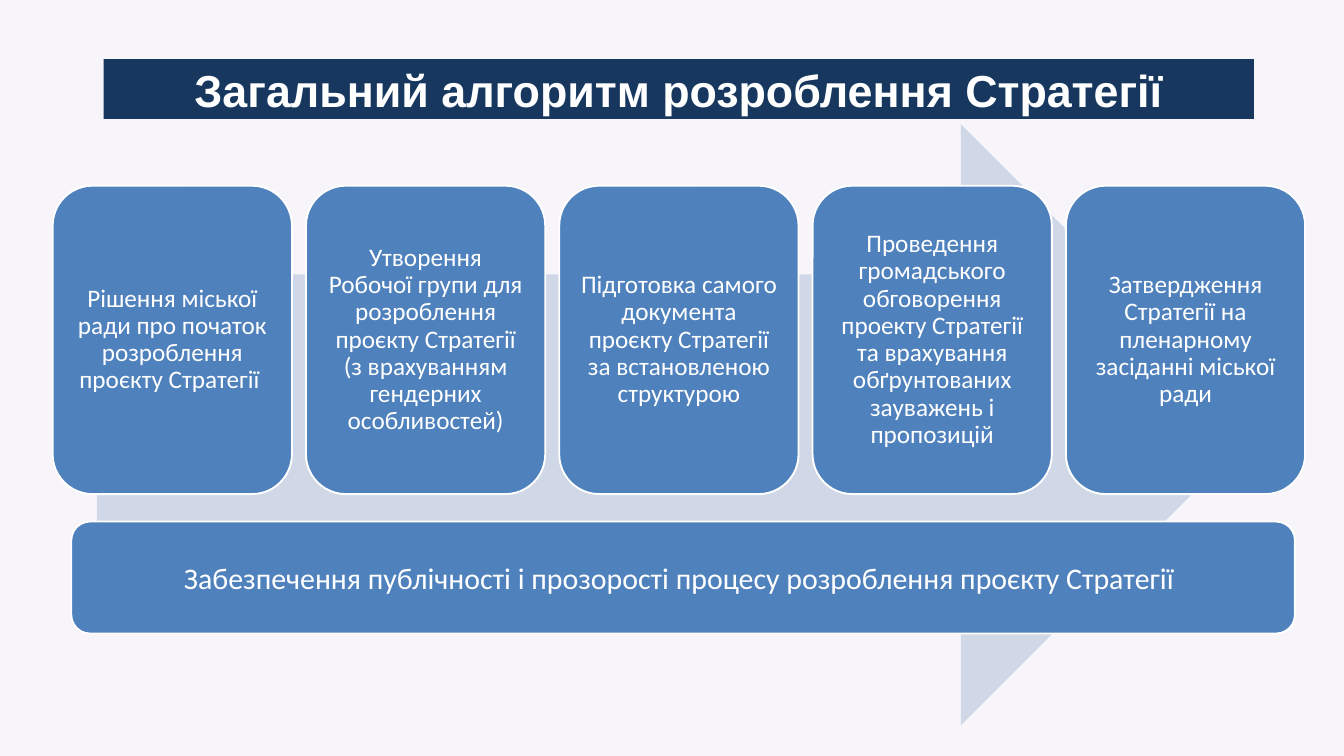
from dataclasses import dataclass

from pptx import Presentation
from pptx.dml.color import RGBColor
from pptx.enum.shapes import MSO_SHAPE
from pptx.enum.text import MSO_ANCHOR, MSO_AUTO_SIZE, PP_ALIGN
from pptx.util import Pt


@dataclass(frozen=True)
class Theme:
    background: str = "F7F4FA"
    arrow: str = "D0D8E8"
    box: str = "4F81BD"
    banner: str = "17375E"
    light: str = "FFFFFF"
    title_font: str = "Arial"
    body_font: str = "Calibri"
    title_size: float = 48
    bar_size: float = 32
    step_size: float = 27


def write(shape, text, *, font, size, color, bold=False, spacing=1.0,
          anchor=MSO_ANCHOR.MIDDLE, inset=None):
    """Put one centred paragraph into a shape."""
    tf = shape.text_frame
    tf.word_wrap = True
    tf.auto_size = MSO_AUTO_SIZE.NONE
    tf.vertical_anchor = anchor
    if inset is not None:
        tf.margin_left = tf.margin_right = Pt(inset)
        tf.margin_top = tf.margin_bottom = Pt(inset)
    p = tf.paragraphs[0]
    p.alignment = PP_ALIGN.CENTER
    p.line_spacing = spacing
    r = p.add_run()
    r.text = text
    r.font.name = font
    r.font.size = Pt(size)
    r.font.bold = bold
    r.font.color.rgb = RGBColor.from_string(color)


class SlideBuilder:
    def __init__(self, prs, theme):
        self.theme = theme
        self.s = prs.slides.add_slide(prs.slide_layouts[5])  # title only
        self.fill(self.s.background, theme.background)

    def fill(self, target, color):
        target.fill.solid()
        target.fill.fore_color.rgb = RGBColor.from_string(color)

    def title(self, text, x, y, w, h):
        sp = self.s.shapes.title
        sp.left, sp.top, sp.width, sp.height = Pt(x), Pt(y), Pt(w), Pt(h)
        self.fill(sp, self.theme.banner)
        write(sp, text, font=self.theme.title_font, size=self.theme.title_size,
              color=self.theme.light, bold=True, anchor=MSO_ANCHOR.TOP)

    def shape(self, kind, x, y, w, h, color):
        sp = self.s.shapes.add_shape(kind, Pt(x), Pt(y), Pt(w), Pt(h))
        sp.shadow.inherit = False
        self.fill(sp, color)
        sp.line.fill.background()
        return sp

    def arrow(self, x, y, w, h):
        self.shape(MSO_SHAPE.RIGHT_ARROW, x, y, w, h, self.theme.arrow)

    def box(self, text, x, y, w, h, **text_format):
        sp = self.shape(MSO_SHAPE.ROUNDED_RECTANGLE, x, y, w, h, self.theme.box)
        sp.line.color.rgb = RGBColor.from_string(self.theme.light)
        sp.line.width = Pt(2)
        write(sp, text, font=self.theme.body_font, color=self.theme.light,
              **text_format)


STEPS = [
    "Рішення міської ради про початок розроблення проєкту Стратегії ",
    "Утворення Робочої групи для розроблення проєкту Стратегії "
    "(з врахуванням гендерних особливостей)",
    "Підготовка самого документа проєкту Стратегії за встановленою структурою",
    "Проведення громадського обговорення проекту Стратегії та врахування "
    "обґрунтованих зауважень і пропозицій",
    "Затвердження Стратегії на пленарному засіданні міської ради",
]


def main():
    prs = Presentation()
    prs.slide_width, prs.slide_height = Pt(1440), Pt(810)
    theme = Theme()
    slide = SlideBuilder(prs, theme)

    # Title banner
    slide.title("Загальний алгоритм розроблення Стратегії", 111, 63.4, 1232.6, 64)

    # Process arrow behind the steps
    slide.arrow(103.7, 133.2, 1247.8, 643.7)

    # Five steps in an even row
    left, width, gap = 56.4, 256.4, 15
    for i, text in enumerate(STEPS):
        slide.box(text, left + i * (width + gap), 199, width, 330.4,
                  size=theme.step_size, spacing=0.9, inset=8)

    # Bar that spans all steps
    slide.box("Забезпечення публічності і прозорості процесу розроблення "
              "проєкту Стратегії ", 76.4, 558.8, 1311, 120, size=theme.bar_size)

    prs.save("out.pptx")


if __name__ == "__main__":
    main()
